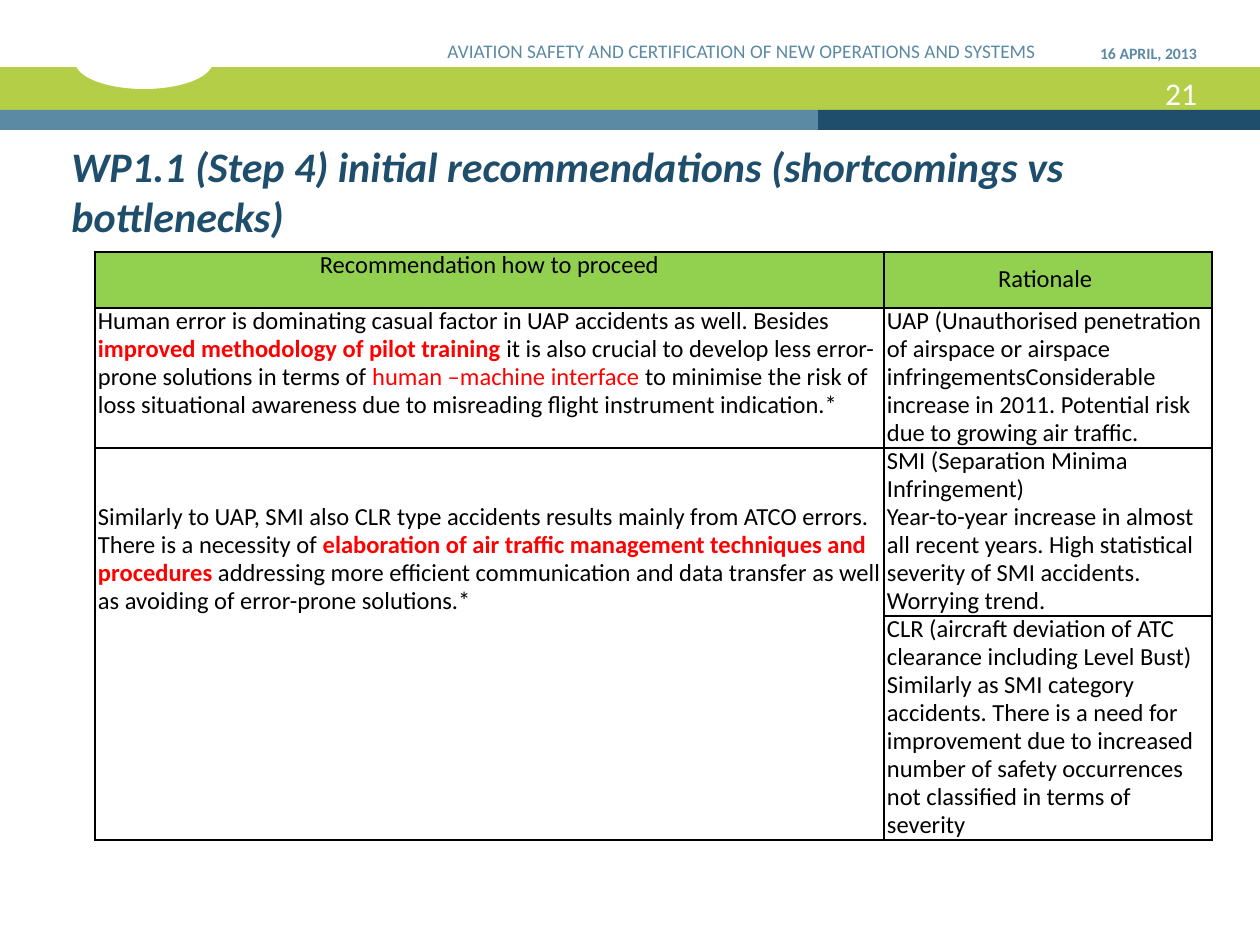
"""Build the slide on initial recommendations for aviation safety."""
from lxml.etree import SubElement
from pptx import Presentation
from pptx.dml.color import RGBColor
from pptx.enum.shapes import MSO_SHAPE as Shape
from pptx.enum.text import MSO_ANCHOR as Anchor, PP_ALIGN as Align
from pptx.oxml.ns import qn
from pptx.util import Pt

PX = 914400 / 126
COLORS = {
    "lime": "B5CE48", "navy": "1E4E6B", "steel": "5B8AA5", "white": "FFFFFF",
    "header": "92D050", "black": "000000", "red": "FF0000",
}


def px(*lengths):
    return [round(length * PX) for length in lengths]


def add_run(paragraph, text, size, color, bold=False, italic=False):
    run = paragraph.add_run()
    run.text = text
    run.font.name = "Calibri"
    run.font.size = Pt(size)
    run.font.bold = bold
    run.font.italic = italic
    run.font.color.rgb = RGBColor.from_string(COLORS[color])


presentation = Presentation()
presentation.slide_width, presentation.slide_height = px(1260, 945)
slide = presentation.slides.add_slide(presentation.slide_layouts[6])

for kind, box, color in [
    (Shape.RECTANGLE, (0, 67, 1260, 43), "lime"),
    (Shape.RECTANGLE, (818, 110, 442, 20), "navy"),
    (Shape.RECTANGLE, (0, 110, 818, 20), "steel"),
    (Shape.OVAL, (75, 34, 138, 55), "white"),
]:
    shape = slide.shapes.add_shape(kind, *px(*box))
    shape.shadow.inherit = False
    shape.fill.solid()
    shape.fill.fore_color.rgb = RGBColor.from_string(COLORS[color])
    shape.line.fill.background()

title = "WP1.1 (Step 4) initial recommendations (shortcomings vs bottlenecks)"
event = "AVIATION SAFETY AND CERTIFICATION OF NEW OPERATIONS AND SYSTEMS"
for box, text, size, color, bold, italic, align, right_inset in [
    ((1092, 68, 105, 50), "21", 18, "white", False, False, Align.RIGHT, 0),
    ((1047, 6, 150, 63), "16 APRIL, 2013", 9, "steel", True, False, Align.RIGHT, 0),
    ((371, 6, 665, 63), event, 11, "steel", False, False, Align.RIGHT, 0),
    ((59, 78, 1168, 169), title, 24, "navy", True, True, Align.LEFT, 13),
]:
    frame = slide.shapes.add_textbox(*px(*box)).text_frame
    frame.word_wrap = True
    frame.vertical_anchor = Anchor.BOTTOM
    frame.margin_right, = px(right_inset)
    frame.paragraphs[0].alignment = align
    add_run(frame.paragraphs[0], text, size, color, bold, italic)

training = [
    ("Human error is dominating casual factor in UAP accidents as well. Besides ", "black", False),
    ("improved methodology of pilot training ", "red", True),
    ("it is also crucial to develop less error-prone solutions in terms of ", "black", False),
    ("human –machine interface ", "red", False),
    ("to minimise the risk of loss situational awareness due to misreading flight "
     "instrument indication.*", "black", False),
]
management = [
    ("Similarly to UAP, SMI also CLR type accidents results mainly from ATCO errors. "
     "There is a necessity of ", "black", False),
    ("elaboration of air traffic management techniques and procedures", "red", True),
    (" addressing more efficient communication and data transfer as well as avoiding "
     "of error-prone solutions.*", "black", False),
]
penetration = [
    ("UAP (Unauthorised penetration of airspace or airspace infringementsConsiderable "
     "increase in 2011. Potential risk due to growing air traffic.", "black", False),
]
separation = [
    [("SMI (Separation Minima Infringement)", "black", False)],
    [("Year-to-year increase in almost all recent years. High statistical severity of "
      "SMI accidents. Worrying trend.", "black", False)],
]
clearance = [
    [("CLR (aircraft deviation of ATC clearance including Level Bust)", "black", False)],
    [("Similarly as SMI category accidents. There is a need for improvement due to "
      "increased number of safety occurrences not classified in terms of severity",
      "black", False)],
]
rows = [
    [[[("Recommendation how to proceed", "black", False)]], [[("Rationale ", "black", False)]]],
    [[training], [penetration]],
    [[management], separation],
    [[], clearance],
]
widths = (789, 328)
line_counts = (2, 5, 6, 8)
line_height = 28

table = slide.shapes.add_table(
    len(rows), len(widths), *px(95, 252, sum(widths), line_height * sum(line_counts))
).table
table.first_row = table.horz_banding = False
for column, width in zip(table.columns, px(*widths)):
    column.width = width

for row_index, (row, line_count) in enumerate(zip(rows, line_counts)):
    table.rows[row_index].height, = px(line_height * line_count)
    for column_index, paragraphs in enumerate(row):
        cell = table.cell(row_index, column_index)
        cell.margin_left, cell.margin_right, cell.margin_top, cell.margin_bottom = px(3, 3, 0, 0)
        cell.vertical_anchor = Anchor.TOP
        properties = cell._tc.get_or_add_tcPr()
        for side in ("lnL", "lnR", "lnT", "lnB"):
            border = SubElement(properties, qn(f"a:{side}"), w=str(Pt(1)))
            border_fill = SubElement(border, qn("a:solidFill"))
            SubElement(border_fill, qn("a:srgbClr"), val=COLORS["black"])
        if row_index == 0:
            cell.fill.solid()
            cell.fill.fore_color.rgb = RGBColor.from_string(COLORS["header"])
        else:
            cell.fill.background()
        for index, runs in enumerate(paragraphs):
            frame = cell.text_frame
            paragraph = frame.add_paragraph() if index else frame.paragraphs[0]
            paragraph.alignment = Align.LEFT if row_index else Align.CENTER
            paragraph.line_spacing = Pt(16)
            for text, color, bold in runs:
                add_run(paragraph, text, 14, color, bold)

table.cell(0, 1).vertical_anchor = Anchor.MIDDLE
table.cell(2, 0).margin_top, = px(2 * line_height)
table.cell(2, 0).merge(table.cell(3, 0))

presentation.save("out.pptx")
